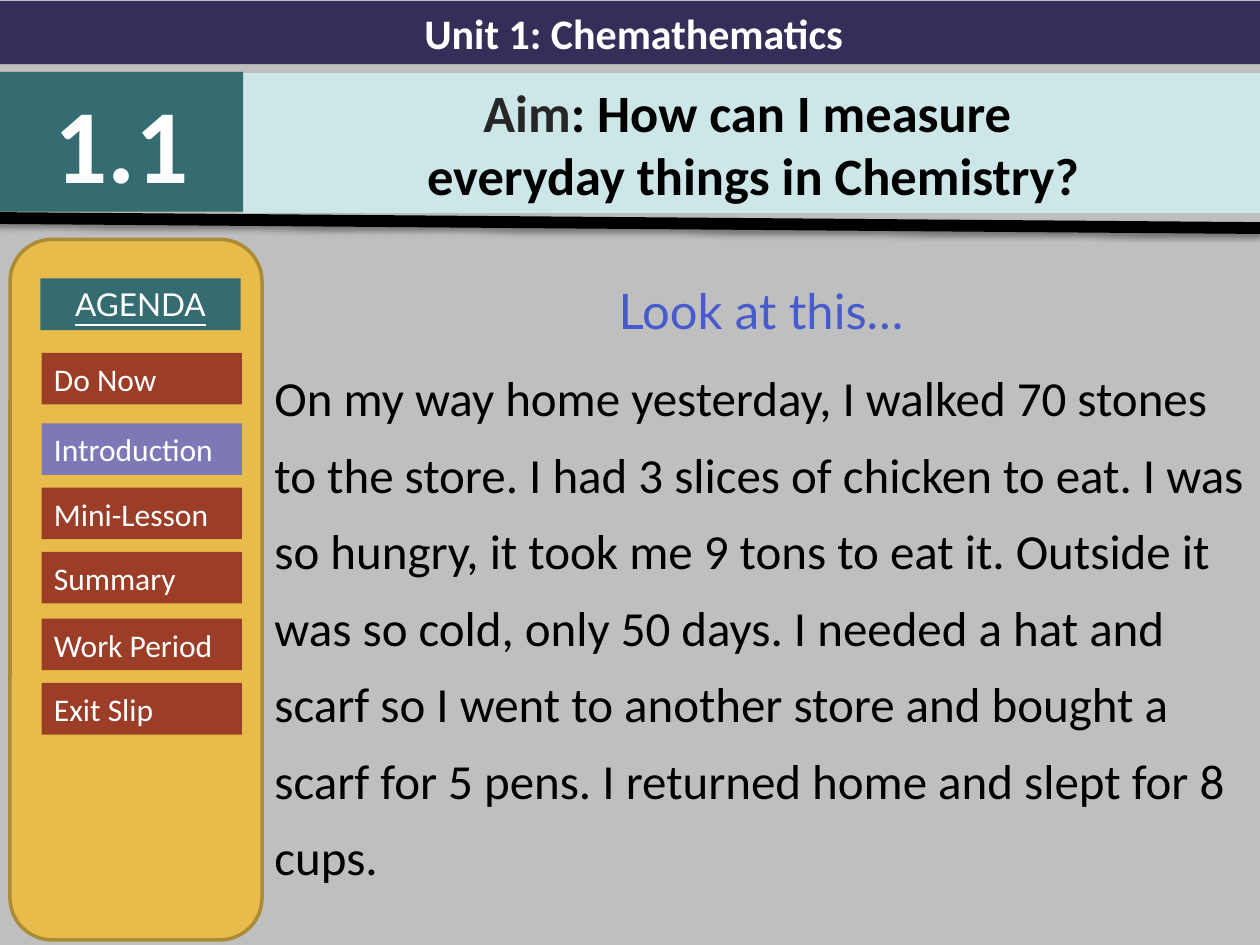
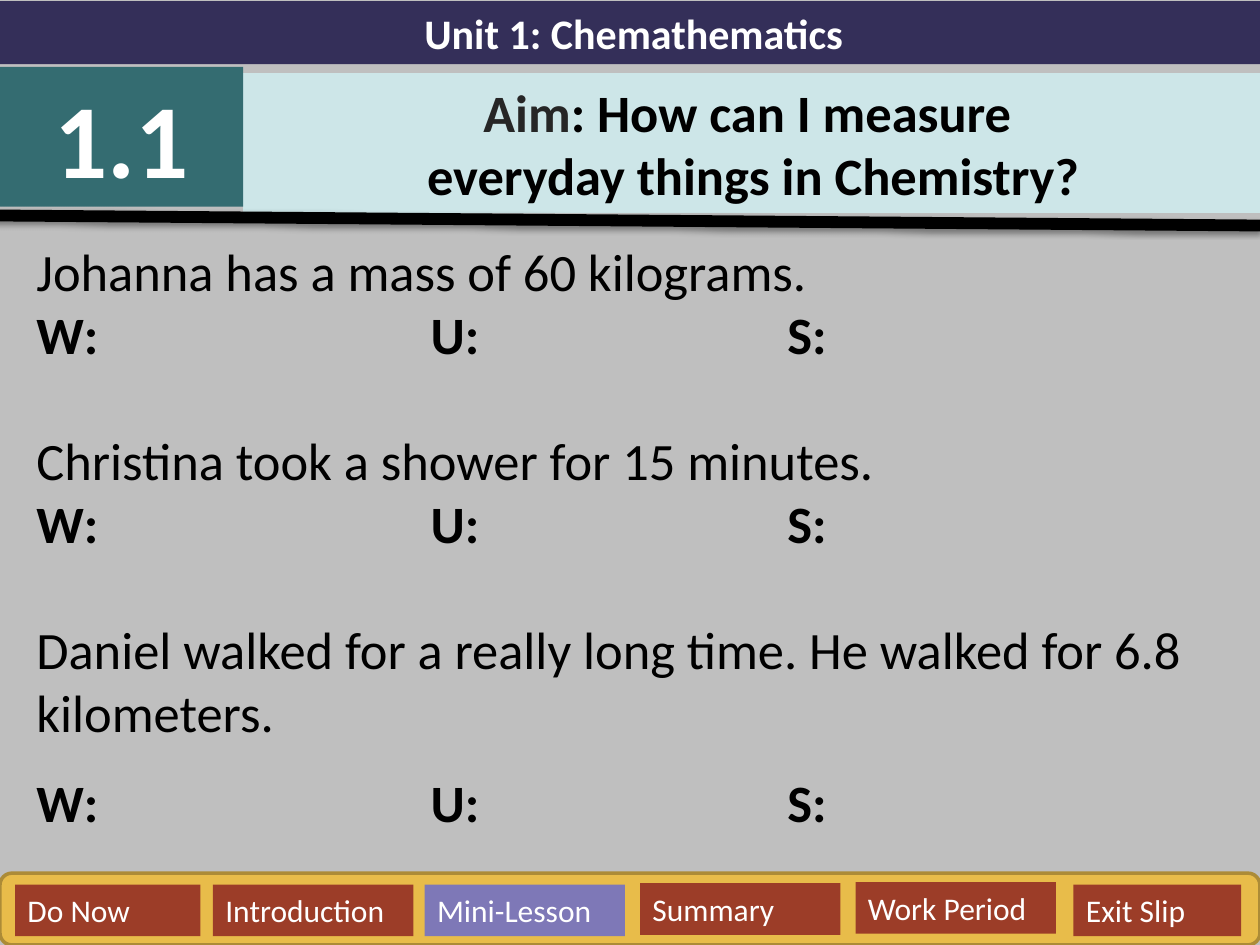
from dataclasses import dataclass

from lxml import etree
from pptx import Presentation
from pptx.dml.color import RGBColor
from pptx.enum.shapes import MSO_CONNECTOR, MSO_SHAPE
from pptx.enum.text import MSO_ANCHOR, MSO_AUTO_SIZE, PP_ALIGN
from pptx.oxml import parse_xml
from pptx.oxml.ns import nsdecls, qn
from pptx.util import Pt

RECT, ROUND_RECT = MSO_SHAPE.RECTANGLE, MSO_SHAPE.ROUNDED_RECTANGLE
STRAIGHT = MSO_CONNECTOR.STRAIGHT
LEFT, CENTER = PP_ALIGN.LEFT, PP_ALIGN.CENTER
MIDDLE, TOP = MSO_ANCHOR.MIDDLE, MSO_ANCHOR.TOP
NO_RESIZE = MSO_AUTO_SIZE.NONE

EMU_PER_PX = 9144  # 100 px to the inch
TITLE_ONLY = 5

GRAY, NAVY, TEAL, ICE = "BFBFBF", "342F59", "346C71", "CDE6E8"
GOLD, GOLD_EDGE, RUST, VIOLET = "E8BC4A", "AC8B37", "9C3D28", "7E78B7"
WHITE, BLACK, CHARCOAL, BLUE = "FFFFFF", "000000", "262626", "475BCD"
BODY_FONT, ACCENT_FONT = "Calibri", "Lato"

STORY = (
    "On my way home yesterday, I walked 70 stones to the store. I had 3 slices of "
    "chicken to eat. I was so hungry, it took me 9 tons to eat it. Outside it was so "
    "cold, only 50 days. I needed a hat and scarf so I went to another store and "
    "bought a scarf for 5 pens. I returned home and slept for 8 cups."
)
ANSWER_LINE = "W:\tU:\tS:"
ANSWER_TABS = (313, 596)


@dataclass(frozen=True)
class Area:
    left: int
    top: int
    width: int
    height: int

    def emu(self):
        return [px(n) for n in (self.left, self.top, self.width, self.height)]


@dataclass(frozen=True)
class TextStyle:
    size: int
    color: str = BLACK
    bold: bool = False
    font: str = BODY_FONT
    align: PP_ALIGN = LEFT
    underline: bool = False


@dataclass(frozen=True)
class Chip:
    label: str
    area: Area


@dataclass(frozen=True)
class Question:
    text: str
    space_before: int
    answer_space: int


UNIT_STYLE = TextStyle(24, WHITE, True, align=CENTER)
NUMBER_STYLE = TextStyle(60, WHITE, True, align=CENTER)
AIM_STYLE = TextStyle(30, BLACK, True, align=CENTER)
CHIP_STYLE = TextStyle(18, WHITE)
AGENDA_STYLE = TextStyle(18, WHITE, font=ACCENT_FONT, align=CENTER, underline=True)

STAGES = ("Do Now", "Introduction", "Mini-Lesson", "Summary", "Work Period", "Exit Slip")
SIDE_TOPS = (280, 336, 387, 438, 491, 542)
SIDE_CHIPS = [Chip(stage, Area(33, top, 159, 41)) for stage, top in zip(STAGES, SIDE_TOPS)]
FOOTER_SLOTS = ((12, 702, 147), (169, 702, 159), (337, 702, 159),
                (508, 701, 159), (679, 700, 159), (852, 702, 133))
FOOTER_CHIPS = [Chip(stage, Area(left, top, width, 41))
                for stage, (left, top, width) in zip(STAGES, FOOTER_SLOTS)]

QUESTIONS = (
    Question("Johanna has a mass of 60 kilograms.", 0, 0),
    Question("Christina took a shower for 15 minutes.", 36, 0),
    Question("Daniel walked for a really long time. He walked for 6.8 kilometers.", 36, 15),
)


def px(length: int) -> int:
    return length * EMU_PER_PX


def rgb(color: str) -> RGBColor:
    return RGBColor.from_string(color)


def format_paragraph(para, style: TextStyle) -> None:
    para.alignment = style.align
    for span in para.runs:
        font = span.font
        font.name, font.size, font.bold = style.font, Pt(style.size), style.bold
        font.underline = style.underline
        font.color.rgb = rgb(style.color)


def add_panel(slide, kind, area: Area, fill: str):
    """Add a flat filled shape without outline or shadow."""
    panel = slide.shapes.add_shape(kind, *area.emu())
    panel.shadow.inherit = False
    panel.fill.solid()
    panel.fill.fore_color.rgb = rgb(fill)
    panel.line.fill.background()
    return panel


def add_label(slide, area: Area, fill: str, text: str, style: TextStyle) -> None:
    frame = add_panel(slide, RECT, area, fill).text_frame
    frame.word_wrap = True
    frame.vertical_anchor = MIDDLE
    frame.text = text
    format_paragraph(frame.paragraphs[0], style)


def add_text_frame(slide, area: Area):
    frame = slide.shapes.add_textbox(*area.emu()).text_frame
    frame.word_wrap = True
    frame.vertical_anchor = TOP
    return frame


def set_tabs(para, positions) -> None:
    tab_list = etree.SubElement(para._p.get_or_add_pPr(), qn("a:tabLst"))
    for position in positions:
        etree.SubElement(tab_list, qn("a:tab"), pos=str(px(position)), algn="l")


def format_title(slide) -> None:
    title = slide.shapes.title
    title.left, title.top, title.width, title.height = Area(193, 58, 810, 111).emu()
    title.fill.solid()
    title.fill.fore_color.rgb = rgb(ICE)
    frame = title.text_frame
    frame.text = "Aim\neveryday things in Chemistry?"
    frame.paragraphs[0].add_run().text = ": How can I measure "
    frame.word_wrap = True
    frame.auto_size = NO_RESIZE
    frame.vertical_anchor = MIDDLE
    for para in frame.paragraphs:
        format_paragraph(para, AIM_STYLE)
    frame.paragraphs[0].runs[0].font.color.rgb = rgb(CHARCOAL)


def add_rule(slide, top: int) -> None:
    """Draw the slightly tilted black line with its soft shadow."""
    rule = slide.shapes.add_connector(STRAIGHT, px(-5), px(top), px(1000), px(top + 8))
    rule.line.color.rgb = rgb(BLACK)
    rule.line.width = Pt(6.75)
    rule._element.spPr.append(parse_xml(
        f'<a:effectLst {nsdecls("a")}><a:outerShdw blurRad="{Pt(3.1)}" dist="{Pt(1.6)}" '
        f'dir="5400000" rotWithShape="0"><a:srgbClr val="{BLACK}"><a:alpha val="38000"/>'
        '</a:srgbClr></a:outerShdw></a:effectLst>'))


def add_lesson_slide(deck, number_top: int, rule_top: int):
    slide = deck.slides.add_slide(deck.slide_layouts[TITLE_ONLY])
    format_title(slide)
    add_label(slide, Area(0, 1, 1006, 50), NAVY, "Unit 1: Chemathematics", UNIT_STYLE)
    add_label(slide, Area(0, number_top, 193, 111), TEAL, "1.1", NUMBER_STYLE)
    add_rule(slide, rule_top)
    return slide


def add_agenda(slide, area: Area, chips, current: str) -> None:
    tray = add_panel(slide, ROUND_RECT, area, GOLD)
    tray.line.color.rgb = rgb(GOLD_EDGE)
    tray.line.width = Pt(2)
    for chip in chips:
        fill = VIOLET if chip.label == current else RUST
        add_label(slide, chip.area, fill, chip.label, CHIP_STYLE)


def build_introduction(deck) -> None:
    slide = add_lesson_slide(deck, number_top=57, rule_top=173)
    add_agenda(slide, Area(8, 190, 200, 556), SIDE_CHIPS, "Introduction")
    add_label(slide, Area(32, 221, 159, 41), TEAL, "AGENDA", AGENDA_STYLE)
    frame = add_text_frame(slide, Area(208, 204, 792, 546))
    frame.text = f"Look at this…\n{STORY}"
    heading, story = frame.paragraphs
    format_paragraph(heading, TextStyle(28, BLUE, font=ACCENT_FONT, align=CENTER))
    format_paragraph(story, TextStyle(28))
    for para in frame.paragraphs:
        para.line_spacing = 1.3
        para.space_before = Pt(6)


def build_mini_lesson(deck) -> None:
    slide = add_lesson_slide(deck, number_top=53, rule_top=171)
    add_agenda(slide, Area(0, 693, 1000, 57), FOOTER_CHIPS, "Mini-Lesson")
    frame = add_text_frame(slide, Area(19, 185, 966, 488))
    frame.text = "\n".join(f"{question.text}\n{ANSWER_LINE}" for question in QUESTIONS)
    prompts, answers = frame.paragraphs[::2], frame.paragraphs[1::2]
    for question, prompt, answer in zip(QUESTIONS, prompts, answers):
        format_paragraph(prompt, TextStyle(30))
        prompt.space_before = Pt(question.space_before)
        format_paragraph(answer, TextStyle(30, bold=True))
        answer.space_before = Pt(question.answer_space)
        set_tabs(answer, ANSWER_TABS)


def main() -> None:
    deck = Presentation()
    deck.slide_width, deck.slide_height = px(1000), px(750)
    backdrop = deck.slide_master.background.fill
    backdrop.solid()
    backdrop.fore_color.rgb = rgb(GRAY)
    build_introduction(deck)
    build_mini_lesson(deck)
    deck.save("out.pptx")


if __name__ == "__main__":
    main()
